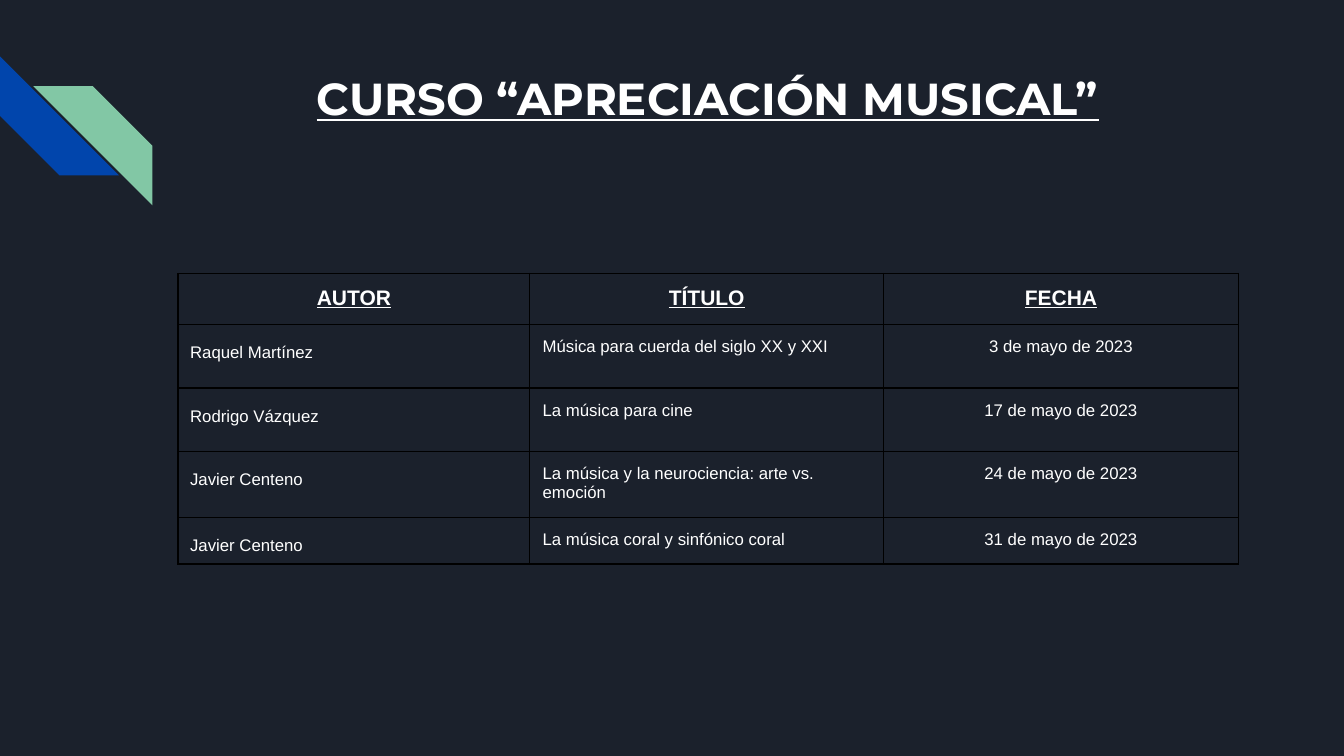
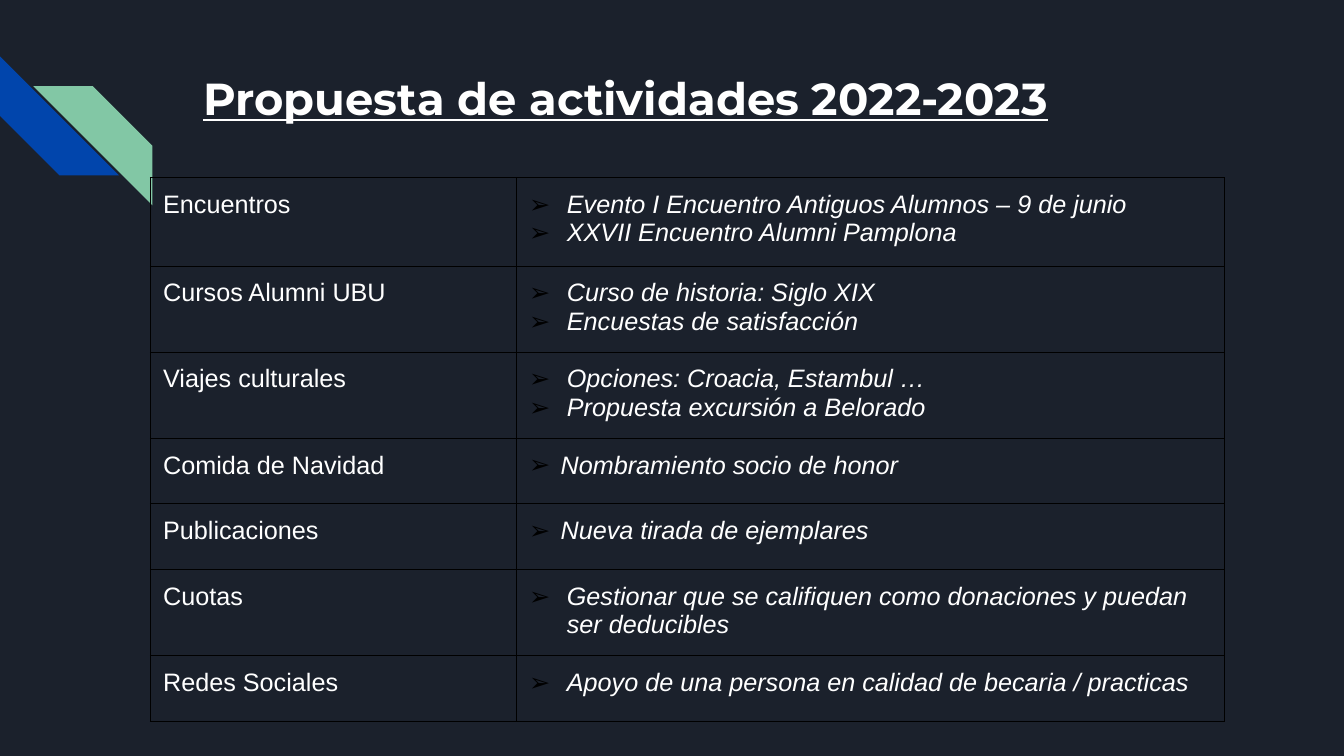
from dataclasses import dataclass

from lxml.etree import SubElement
from pptx import Presentation
from pptx.dml.color import RGBColor
from pptx.enum.shapes import MSO_SHAPE
from pptx.enum.text import PP_ALIGN
from pptx.oxml import parse_xml
from pptx.oxml.ns import nsdecls, qn
from pptx.presentation import Presentation as Deck
from pptx.slide import Slide
from pptx.table import Table, _Cell
from pptx.util import Pt

COLORS = {
    "background": "1B212C",
    "blue": "0145AC",
    "green": "82C7A5",
    "text": "FFFFFF",
    "line": "000000",
}
INSET = 9.14
STRIPE_SIZE = 85


@dataclass(frozen=True)
class Stripe:
    left: float
    top: float
    color: str
    rotation: float = 0
    mirrored: bool = False


@dataclass(frozen=True)
class TextStyle:
    size: float
    font: str = "Arial"
    bold: bool = False
    italic: bool = False
    underline: bool = False
    align: PP_ALIGN = PP_ALIGN.LEFT
    line_spacing: float = 1.0
    margin_left: float = INSET
    margin_top: float = INSET
    bullet_indent: float = 0


@dataclass(frozen=True)
class Grid:
    left: float
    top: float
    columns: tuple[float, ...]
    rows: tuple[float, ...]
    line_width: float


@dataclass(frozen=True)
class Course:
    author: str
    title: str
    date: str


@dataclass(frozen=True)
class Activity:
    name: str
    proposals: tuple[str, ...]
    bullet_indent: float = 27


STRIPES = (
    Stripe(0, 40.3, "blue", rotation=270),
    Stripe(23.8, 61.6, "green", mirrored=True),
)

TITLE = TextStyle(32, "Montserrat", bold=True, underline=True)
CENTERED_TITLE = TextStyle(32, "Montserrat", bold=True, underline=True, align=PP_ALIGN.CENTER)
HEADER = TextStyle(15, bold=True, underline=True, align=PP_ALIGN.CENTER)
AUTHOR = TextStyle(12, line_spacing=2.0, margin_left=8.6, margin_top=0)
COURSE_TITLE = TextStyle(12)
DATE = TextStyle(12, align=PP_ALIGN.CENTER)
ACTIVITY = TextStyle(18)

COURSE_GRID = Grid(127.2, 195.3, (251.3, 252.7, 253.4), (35.6, 45.6, 45.6, 46, 33), 1)
ACTIVITY_GRID = Grid(107.4, 126.8, (261.4, 506.2), (63.4, 59.4, 59.4, 46.8, 46.8, 59.8, 46.8), 0.75)

COURSES = (
    Course("Raquel Martínez", "Música para cuerda del siglo XX y XXI", "3 de mayo de 2023"),
    Course("Rodrigo Vázquez", "La música para cine", "17 de mayo de 2023"),
    Course("Javier Centeno", "La música y la neurociencia: arte vs. emoción", "24 de mayo de 2023"),
    Course("Javier Centeno", "La música coral y sinfónico coral", "31 de mayo de 2023"),
)

ACTIVITIES = (
    Activity("Encuentros", ("Evento I Encuentro Antiguos Alumnos – 9 de junio", "XXVII Encuentro Alumni Pamplona")),
    Activity("Cursos Alumni UBU", ("Curso de historia: Siglo XIX", "Encuestas de satisfacción")),
    Activity("Viajes culturales", ("Opciones: Croacia, Estambul …", "Propuesta excursión a Belorado")),
    Activity("Comida de Navidad", ("Nombramiento socio de honor",), 22.5),
    Activity("Publicaciones", ("Nueva tirada de ejemplares",), 22.5),
    Activity("Cuotas", ("Gestionar que se califiquen como donaciones y puedan ser deducibles",)),
    Activity("Redes Sociales", ("Apoyo de una persona en calidad de becaria / practicas",)),
)


def color(name: str) -> RGBColor:
    return RGBColor.from_string(COLORS[name])


def add_bullet(paragraph, indent: float) -> None:
    properties = paragraph._p.get_or_add_pPr()
    properties.set("marL", str(Pt(indent)))
    properties.set("indent", str(-Pt(indent)))
    bullet_color = SubElement(properties, qn("a:buClr"))
    SubElement(bullet_color, qn("a:srgbClr"), val=COLORS["line"])
    SubElement(properties, qn("a:buFont"), typeface="Arial")
    SubElement(properties, qn("a:buChar"), char="➢")


def write(text_frame, lines: tuple[str, ...], style: TextStyle) -> None:
    """Fill a text frame with one paragraph per line."""
    for index, line in enumerate(lines):
        paragraph = text_frame.add_paragraph() if index else text_frame.paragraphs[0]
        paragraph.text = line
        paragraph.alignment = style.align
        paragraph.line_spacing = style.line_spacing
        if style.bullet_indent:
            add_bullet(paragraph, style.bullet_indent)
        font = paragraph.font
        font.name, font.size = style.font, Pt(style.size)
        font.bold, font.italic, font.underline = style.bold, style.italic, style.underline
        font.color.rgb = color("text")


def set_margins(target, style: TextStyle) -> None:
    target.margin_left, target.margin_top = Pt(style.margin_left), Pt(style.margin_top)
    target.margin_right, target.margin_bottom = Pt(INSET), Pt(style.margin_top)


def fill_cell(cell: _Cell, lines: tuple[str, ...], style: TextStyle) -> None:
    set_margins(cell, style)
    write(cell.text_frame, lines, style)


def add_borders(cell: _Cell, width: float) -> None:
    properties = cell._tc.get_or_add_tcPr()
    for index, side in enumerate(("lnL", "lnR", "lnT", "lnB")):
        properties.insert(index, parse_xml(
            f'<a:{side} {nsdecls("a")} w="{Pt(width)}"><a:solidFill>'
            f'<a:srgbClr val="{COLORS["line"]}"/></a:solidFill></a:{side}>'
        ))


def add_grid(slide: Slide, grid: Grid) -> Table:
    """Add an unfilled table with thin lines."""
    table = slide.shapes.add_table(
        len(grid.rows), len(grid.columns), Pt(grid.left), Pt(grid.top),
        Pt(sum(grid.columns)), Pt(sum(grid.rows)),
    ).table
    table.first_row = table.horz_banding = False
    for column, width in zip(table.columns, grid.columns):
        column.width = Pt(width)
    for row, height in zip(table.rows, grid.rows):
        row.height = Pt(height)
    for cell in table.iter_cells():
        cell.fill.background()
        add_borders(cell, grid.line_width)
    return table


def add_stripe(slide: Slide, stripe: Stripe) -> None:
    shape = slide.shapes.add_shape(
        MSO_SHAPE.DIAGONAL_STRIPE, Pt(stripe.left), Pt(stripe.top), Pt(STRIPE_SIZE), Pt(STRIPE_SIZE)
    )
    shape.shadow.inherit = False
    shape.fill.solid()
    shape.fill.fore_color.rgb = color(stripe.color)
    shape.line.fill.background()
    shape.rotation = stripe.rotation
    if stripe.mirrored:
        shape._element.spPr.xfrm.set("flipH", "1")


def add_slide(presentation: Deck, title: str, style: TextStyle) -> Slide:
    slide = presentation.slides.add_slide(presentation.slide_layouts[6])
    for stripe in STRIPES:
        add_stripe(slide, stripe)
    text_frame = slide.shapes.add_textbox(Pt(136), Pt(41.3), Pt(739), Pt(54)).text_frame
    text_frame.word_wrap = True
    set_margins(text_frame, style)
    write(text_frame, (title,), style)
    return slide


def add_course_slide(presentation: Deck) -> None:
    slide = add_slide(presentation, "CURSO “APRECIACIÓN MUSICAL”", CENTERED_TITLE)
    table = add_grid(slide, COURSE_GRID)
    for column, heading in enumerate(("AUTOR", "TÍTULO", "FECHA")):
        fill_cell(table.cell(0, column), (heading,), HEADER)
    for row, course in enumerate(COURSES, start=1):
        fill_cell(table.cell(row, 0), (course.author,), AUTHOR)
        fill_cell(table.cell(row, 1), (course.title,), COURSE_TITLE)
        fill_cell(table.cell(row, 2), (course.date,), DATE)


def add_activity_slide(presentation: Deck) -> None:
    slide = add_slide(presentation, "Propuesta de actividades 2022-2023", TITLE)
    table = add_grid(slide, ACTIVITY_GRID)
    for row, activity in enumerate(ACTIVITIES):
        fill_cell(table.cell(row, 0), (activity.name,), ACTIVITY)
        proposal_style = TextStyle(18, italic=True, bullet_indent=activity.bullet_indent)
        fill_cell(table.cell(row, 1), activity.proposals, proposal_style)


def main() -> None:
    presentation = Presentation()
    presentation.slide_width, presentation.slide_height = Pt(960), Pt(540)
    background = presentation.slide_master.background.fill
    background.solid()
    background.fore_color.rgb = color("background")
    add_course_slide(presentation)
    add_activity_slide(presentation)
    presentation.save("out.pptx")


if __name__ == "__main__":
    main()
